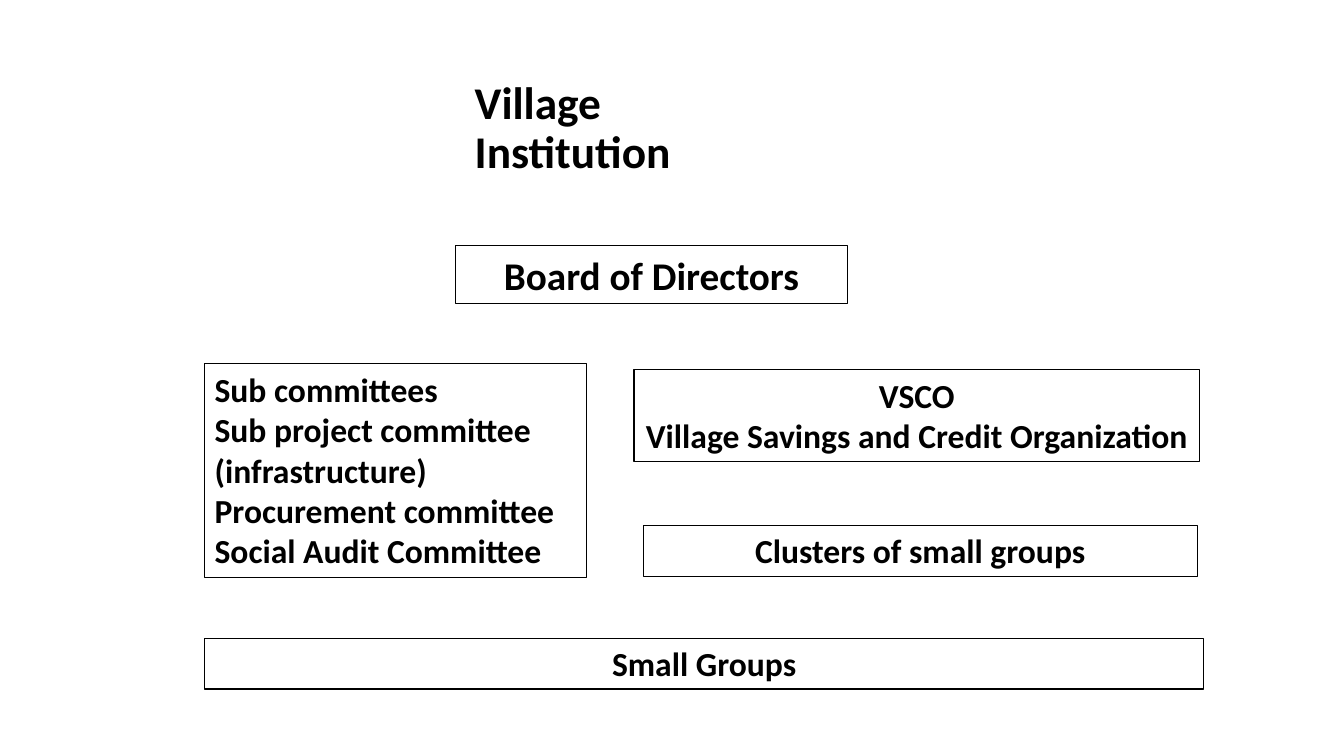
from dataclasses import dataclass

from pptx import Presentation
from pptx.dml.color import RGBColor
from pptx.enum import shapes, text
from pptx.util import Pt

BLACK = RGBColor(0, 0, 0)
FONT = "Calibri"
LEFT = text.PP_ALIGN.LEFT
MID = text.PP_ALIGN.CENTER


@dataclass
class Box:
    x: float
    y: float
    w: float
    h: float
    lines: tuple[str, ...]
    size: float = 24
    align: text.PP_ALIGN = MID


TITLE = Box(332, 69.8, 250, 45.4, ("Village Institution",), 32.4, LEFT)
BOXES = (
    Box(146.2, 259.9, 272.6, 152.6,
        ("Sub committees", "Sub project committee (infrastructure)",
         "Procurement committee", "Social Audit Committee"), align=LEFT),
    Box(325.4, 175.7, 280, 41.2, ("Board of Directors",), 28),
    Box(452.9, 264.2, 404, 65.4,
        ("VSCO", "Village Savings and Credit Organization")),
    Box(459.4, 375.1, 396, 36.4, ("Clusters of small groups",)),
    Box(146.2, 455.8, 713.5, 36.4, ("Small Groups",)),
)


def write(frame, box: Box, space: float = 1) -> None:
    frame.word_wrap = True
    for i, line in enumerate(box.lines):
        para = frame.add_paragraph() if i else frame.paragraphs[0]
        para.alignment = box.align
        para.line_spacing = space
        run = para.add_run()
        run.text = line
        run.font.name = FONT
        run.font.size = Pt(box.size)
        run.font.bold = True
        run.font.color.rgb = BLACK


def place(box: Box) -> tuple[Pt, ...]:
    return tuple(Pt(n) for n in (box.x, box.y, box.w, box.h))


def draw_title(slide, box: Box) -> None:
    frame = slide.shapes.add_textbox(*place(box)).text_frame
    frame.vertical_anchor = text.MSO_ANCHOR.MIDDLE
    write(frame, box, 0.9)


def draw_box(slide, box: Box) -> None:
    shape = slide.shapes.add_shape(
        shapes.MSO_SHAPE.RECTANGLE, *place(box))
    shape.shadow.inherit = False
    shape.fill.background()
    shape.line.color.rgb = BLACK
    shape.line.width = Pt(0.75)
    frame = shape.text_frame
    frame.vertical_anchor = text.MSO_ANCHOR.TOP
    frame.auto_size = text.MSO_AUTO_SIZE.SHAPE_TO_FIT_TEXT
    write(frame, box)


def main() -> None:
    deck = Presentation()
    deck.slide_width, deck.slide_height = Pt(960), Pt(540)
    slide = deck.slides.add_slide(deck.slide_layouts[6])
    draw_title(slide, TITLE)
    for box in BOXES:
        draw_box(slide, box)
    deck.save("out.pptx")


if __name__ == "__main__":
    main()
